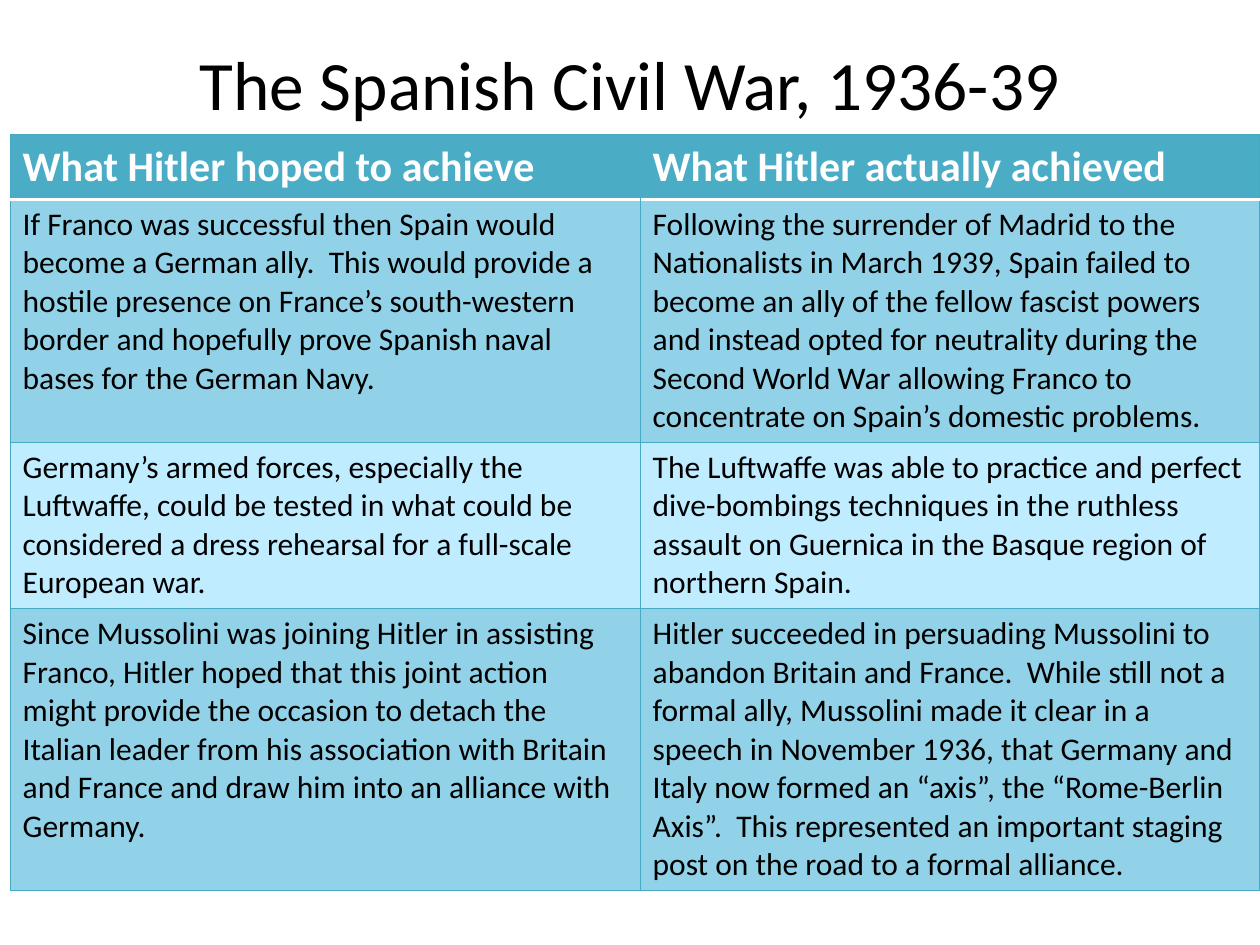
from lxml.etree import SubElement
from pptx import Presentation
from pptx.dml.color import RGBColor
from pptx.enum.text import MSO_ANCHOR as Anchor, PP_ALIGN as Align
from pptx.oxml.ns import qn
from pptx.util import Inches, Pt

BLACK = RGBColor(0x00, 0x00, 0x00)
WHITE = RGBColor(0xFF, 0xFF, 0xFF)
TEAL = RGBColor(0x4B, 0xAC, 0xC6)
BORDER = RGBColor(0x46, 0xAA, 0xC5)
DARK_BAND = RGBColor(0x91, 0xD2, 0xE8)
LIGHT_BAND = RGBColor(0xBF, 0xEC, 0xFF)

COLUMN_WIDTHS = [5, 4.92]
ROW_HEIGHTS = [0.51, 1.93, 1.32, 2.24]
ROWS = [
    ("What Hitler hoped to achieve", "What Hitler actually achieved"),
    (
        "If Franco was successful then Spain would become a German ally.  This would provide a "
        "hostile presence on France’s south-western border and hopefully prove Spanish naval "
        "bases for the German Navy.",
        "Following the surrender of Madrid to the Nationalists in March 1939, Spain failed to "
        "become an ally of the fellow fascist powers and instead opted for neutrality during the "
        "Second World War allowing Franco to concentrate on Spain’s domestic problems.",
    ),
    (
        "Germany’s armed forces, especially the Luftwaffe, could be tested in what could be "
        "considered a dress rehearsal for a full-scale European war.",
        "The Luftwaffe was able to practice and perfect dive-bombings techniques in the ruthless "
        "assault on Guernica in the Basque region of northern Spain.",
    ),
    (
        "Since Mussolini was joining Hitler in assisting Franco, Hitler hoped that this joint "
        "action might provide the occasion to detach the Italian leader from his association with "
        "Britain and France and draw him into an alliance with Germany.",
        "Hitler succeeded in persuading Mussolini to abandon Britain and France.  While still not "
        "a formal ally, Mussolini made it clear in a speech in November 1936, that Germany and "
        "Italy now formed an “axis”, the “Rome-Berlin Axis”.  This represented an important "
        "staging post on the road to a formal alliance.",
    ),
]


def add_text(paragraph, text, size, color, bold=False):
    run = paragraph.add_run()
    run.text = text
    run.font.name = "Calibri"
    run.font.size = Pt(size)
    run.font.bold = bold
    run.font.color.rgb = color


def add_border(cell, side, color, width):
    properties = cell._tc.get_or_add_tcPr()
    line = SubElement(properties, qn(f"a:ln{side}"), w=str(Pt(width)))
    if color is None:
        SubElement(line, qn("a:noFill"))
    else:
        fill = SubElement(line, qn("a:solidFill"))
        SubElement(fill, qn("a:srgbClr"), val=str(color))


presentation = Presentation()
presentation.slide_width = Inches(10)
presentation.slide_height = Inches(7.5)
slide = presentation.slides.add_slide(presentation.slide_layouts[6])

title = slide.shapes.add_textbox(Inches(0.5), Inches(0.24), Inches(9), Inches(0.83))
title.text_frame.word_wrap = True
title.text_frame.vertical_anchor = Anchor.MIDDLE
title_paragraph = title.text_frame.paragraphs[0]
title_paragraph.alignment = Align.CENTER
add_text(title_paragraph, "The Spanish Civil War, 1936-39", 39.6, BLACK)

table = slide.shapes.add_table(
    len(ROWS), len(COLUMN_WIDTHS), Inches(0.08), Inches(1.07),
    Inches(sum(COLUMN_WIDTHS)), Inches(sum(ROW_HEIGHTS)),
).table
for column, width in zip(table.columns, COLUMN_WIDTHS):
    column.width = Inches(width)
for row, height in zip(table.rows, ROW_HEIGHTS):
    row.height = Inches(height)

for row_index, texts in enumerate(ROWS):
    header = row_index == 0
    for column_index, text in enumerate(texts):
        cell = table.cell(row_index, column_index)
        inner_side = "R" if column_index == 0 else "L"
        for side in "LRTB":
            color, width = BORDER, 0.75
            if header and side == inner_side:
                color = None
            if (header and side == "B") or (row_index == 1 and side == "T"):
                color, width = WHITE, 2
            add_border(cell, side, color, width)
        cell.fill.solid()
        if header:
            cell.fill.fore_color.rgb = TEAL
            cell.vertical_anchor = Anchor.MIDDLE
            add_text(cell.text_frame.paragraphs[0], text, 24, WHITE, True)
        else:
            cell.fill.fore_color.rgb = DARK_BAND if row_index % 2 else LIGHT_BAND
            add_text(cell.text_frame.paragraphs[0], text, 18, BLACK)

presentation.save("out.pptx")
